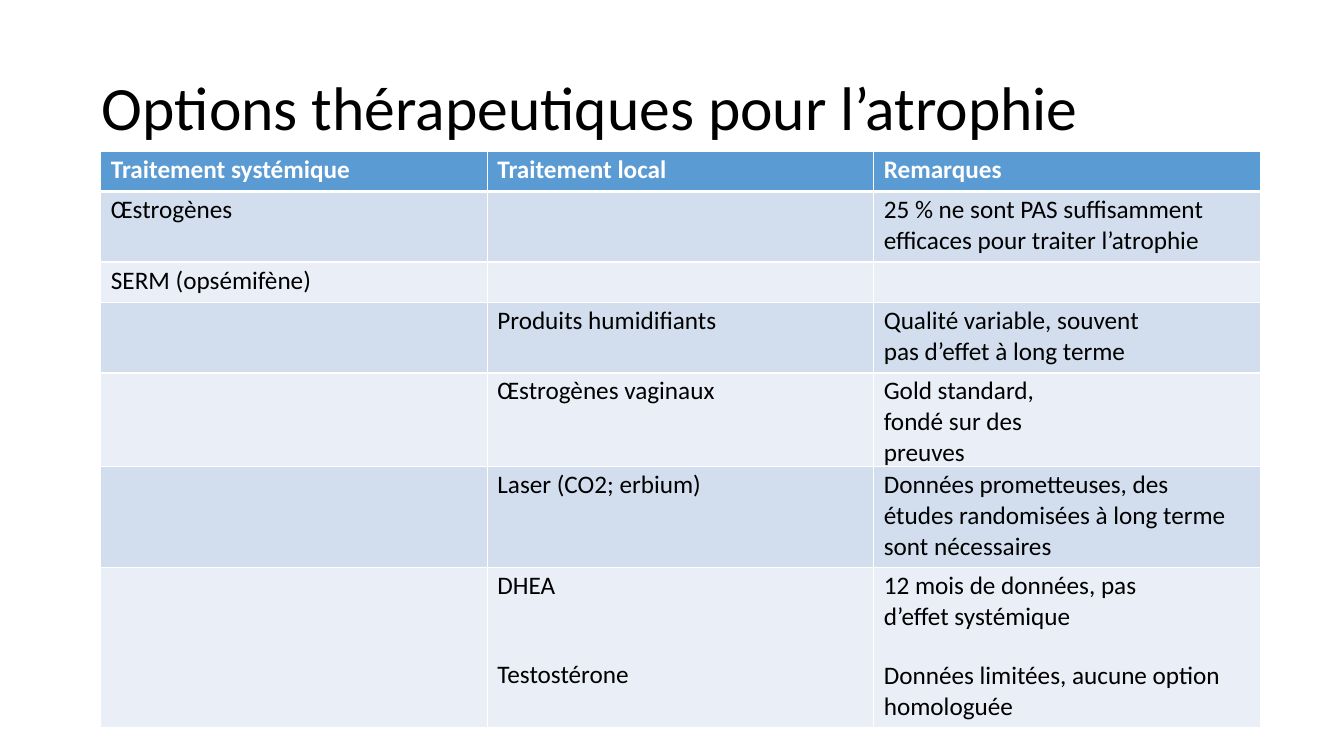
from dataclasses import dataclass

from lxml.etree import SubElement
from pptx import Presentation
from pptx.dml.color import RGBColor
from pptx.enum.text import MSO_ANCHOR, MSO_AUTO_SIZE, PP_ALIGN
from pptx.oxml.ns import qn
from pptx.util import Inches, Pt

COLORS = {
    "header": "5B9BD4",
    "band_dark": "D2DEEE",
    "band_light": "EAEEF7",
    "white": "FFFFFF",
    "black": "000000",
}
FONT = "Calibri"
COLUMN_WIDTH = 11.5 / 3


@dataclass(frozen=True)
class Entry:
    text: str
    right_indent: float = 0
    space_before: float = 2.5


@dataclass(frozen=True)
class TreatmentRow:
    height: float
    systemic: tuple[Entry, ...] = ()
    local: tuple[Entry, ...] = ()
    remarks: tuple[Entry, ...] = ()


TREATMENTS = [
    TreatmentRow(0.4, (Entry("Traitement systémique"),), (Entry("Traitement local"),),
                 (Entry("Remarques"),)),
    TreatmentRow(0.7, systemic=(Entry("Œstrogènes"),), remarks=(
        Entry("25 % ne sont PAS suffisamment efficaces pour traiter l’atrophie", 0.3),)),
    TreatmentRow(0.4, systemic=(Entry("SERM (opsémifène)"),)),
    TreatmentRow(0.7, local=(Entry("Produits humidifiants"),), remarks=(
        Entry("Qualité variable, souvent pas d’effet à long terme", 1),)),
    TreatmentRow(0.7, local=(Entry("Œstrogènes vaginaux"),), remarks=(
        Entry("Gold standard, fondé sur des preuves", 2),)),
    TreatmentRow(1, local=(Entry("Laser (CO2; erbium)"),), remarks=(
        Entry("Données prometteuses, des études randomisées à long terme "
              "sont nécessaires", 0.33),)),
    TreatmentRow(1.59,
                 local=(Entry("DHEA"), Entry("Testostérone", space_before=41.6)),
                 remarks=(Entry("12 mois de données, pas d’effet systémique", 0.9),
                          Entry("Données limitées, aucune option homologuée",
                                space_before=20.3))),
]


def color(name: str) -> RGBColor:
    return RGBColor.from_string(COLORS[name])


def style_font(font, size: float, color_name: str, bold: bool = False) -> None:
    font.name = FONT
    font.size = Pt(size)
    font.bold = bold
    font.color.rgb = color(color_name)


def add_borders(cell, widths: dict[str, float]) -> None:
    properties = cell._tc.get_or_add_tcPr()
    for side, width in widths.items():
        line = SubElement(properties, qn(f"a:ln{side}"), w=str(Pt(width)))
        fill = SubElement(line, qn("a:solidFill"))
        SubElement(fill, qn("a:srgbClr"), val=COLORS["white"])


def write_entries(cell, entries: tuple[Entry, ...], is_header: bool) -> None:
    frame = cell.text_frame
    frame.text = "\n".join(entry.text for entry in entries)
    for paragraph, entry in zip(frame.paragraphs, entries):
        paragraph.space_before = Pt(entry.space_before)
        indents = paragraph._p.get_or_add_pPr()
        indents.set("marL", str(Inches(0.1)))
        indents.set("marR", str(Inches(entry.right_indent)))
        for run in paragraph.runs:
            style_font(run.font, 18, "white" if is_header else "black", is_header)


def add_treatment_table(slide, treatments: list[TreatmentRow]) -> None:
    table = slide.shapes.add_table(
        len(treatments), 3, Inches(1), Inches(1.5), Inches(11.5),
        Inches(sum(row.height for row in treatments))).table
    for column in table.columns:
        column.width = Inches(COLUMN_WIDTH)

    last = len(treatments) - 1
    for index, treatment in enumerate(treatments):
        table.rows[index].height = Inches(treatment.height)
        band = "header" if index == 0 else ("band_light", "band_dark")[index % 2]
        borders = {"L": 1, "R": 1, "T": 3 if index == 1 else 1}
        if index < last:
            borders["B"] = 3 if index == 0 else 1
        contents = (treatment.systemic, treatment.local, treatment.remarks)
        for cell, entries in zip(table.rows[index].cells, contents):
            cell.margin_left = cell.margin_right = cell.margin_bottom = 0
            cell.margin_top = Inches(0.03)
            add_borders(cell, borders)
            cell.fill.solid()
            cell.fill.fore_color.rgb = color(band)
            write_entries(cell, entries, index == 0)


def add_title(slide, text: str) -> None:
    title = slide.shapes.title
    title.left, title.top = Inches(1), Inches(0.67)
    title.width, title.height = Inches(10.41), Inches(0.76)
    frame = title.text_frame
    frame.text = text
    frame.margin_left = frame.margin_right = frame.margin_bottom = 0
    frame.margin_top = Inches(0.01)
    frame.vertical_anchor = MSO_ANCHOR.TOP
    frame.auto_size = MSO_AUTO_SIZE.SHAPE_TO_FIT_TEXT
    paragraph = frame.paragraphs[0]
    paragraph.alignment = PP_ALIGN.LEFT
    paragraph.space_before = Pt(1.1)
    paragraph._p.get_or_add_pPr().set("marL", str(Inches(0.01)))
    style_font(paragraph.runs[0].font, 44, "black")


def main() -> None:
    presentation = Presentation()
    presentation.slide_width = Inches(13.33)
    presentation.slide_height = Inches(7.5)
    slide = presentation.slides.add_slide(presentation.slide_layouts[5])

    # Heading
    add_title(slide, "Options thérapeutiques pour l’atrophie")

    # Treatments by route, with remarks
    add_treatment_table(slide, TREATMENTS)

    presentation.save("out.pptx")


if __name__ == "__main__":
    main()
